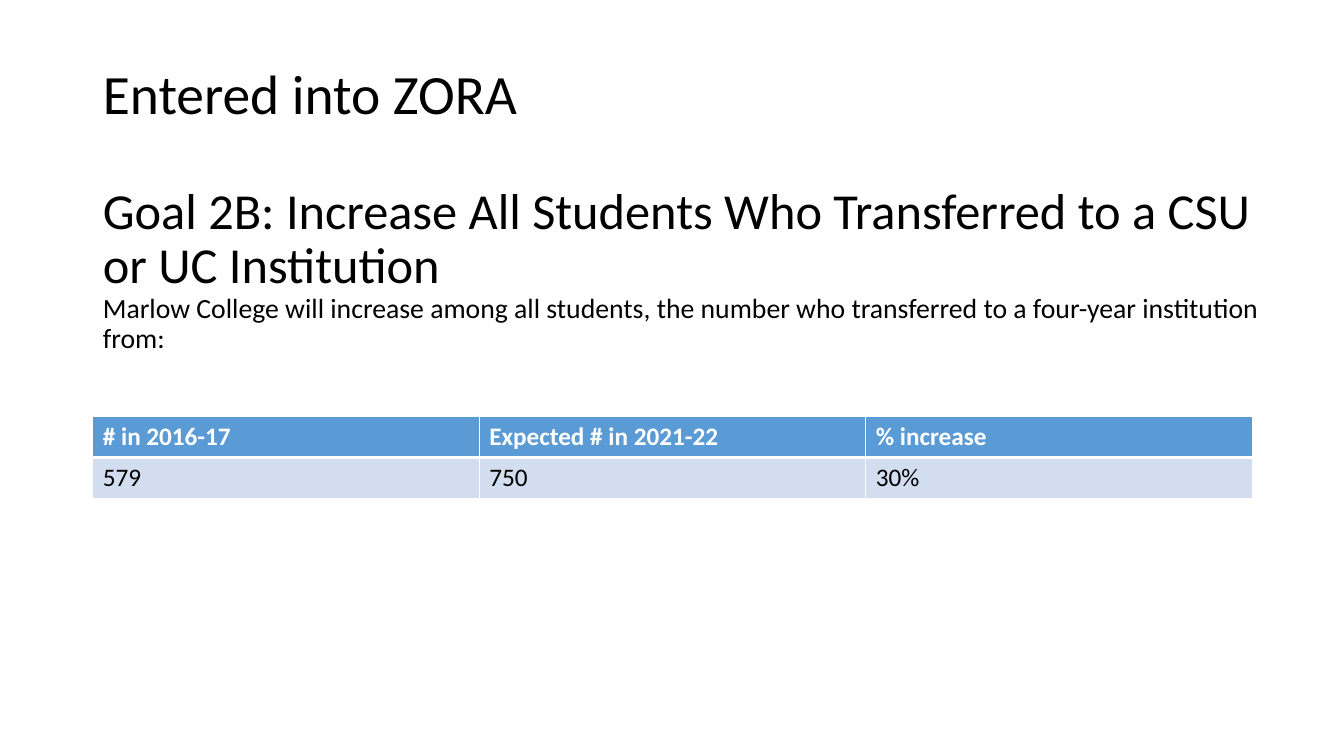
import pptx
import pptx.util
import pptx.dml.color
import pptx.enum.text
import pptx.oxml
import pptx.oxml.ns

Inches, Pt = pptx.util.Inches, pptx.util.Pt
RGBColor = pptx.dml.color.RGBColor

BLACK = RGBColor(0x00, 0x00, 0x00)
WHITE = RGBColor(0xFF, 0xFF, 0xFF)
HEADER_BLUE = RGBColor(0x5B, 0x9B, 0xD5)
PALE_BLUE = RGBColor(0xD2, 0xDE, 0xEF)
FONT = "Calibri"

# text, size in points, space after in points
HEADING = [
    ("Entered into ZORA", 39.6, 42),
    ("Goal 2B: Increase All Students Who Transferred to a CSU or UC Institution", 36, 0),
    ("Marlow College will increase among all students, the number who "
     "transferred to a four-year institution from:", 19.8, 0),
]
TRANSFERS = [
    ("# in 2016-17", "Expected # in 2021-22", "% increase"),
    ("579", "750", "30%"),
]
LEFT = Inches(0.92)
TABLE_TOP, TABLE_WIDTH, ROW_HEIGHT = Inches(4.13), Inches(11.5), Inches(0.41)


def style(target, values):
    for name, value in values.items():
        setattr(target, name, value)


def style_font(font, size, color, bold=False):
    style(font, {"name": FONT, "size": Pt(size), "bold": bold})
    font.color.rgb = color


def add_border(cell, side, width):
    cell._tc.get_or_add_tcPr().append(pptx.oxml.parse_xml(
        f'<a:ln{side} {pptx.oxml.ns.nsdecls("a")} w="{Pt(width)}">'
        f'<a:solidFill><a:srgbClr val="{WHITE}"/></a:solidFill></a:ln{side}>'))


def fill_heading(title):
    style(title, {"left": LEFT, "top": Inches(1.57),
                  "width": Inches(12.1), "height": Inches(1.45)})
    frame = title.text_frame
    style(frame, {"word_wrap": True,
                  "auto_size": pptx.enum.text.MSO_AUTO_SIZE.NONE,
                  "vertical_anchor": pptx.enum.text.MSO_ANCHOR.MIDDLE,
                  "margin_bottom": Inches(0.46)})
    for index, (text, size, gap) in enumerate(HEADING):
        para = frame.add_paragraph() if index else frame.paragraphs[0]
        style(para, {"alignment": pptx.enum.text.PP_ALIGN.LEFT, "line_spacing": 0.9,
                     "space_before": Pt(0), "space_after": Pt(gap)})
        span = para.add_run()
        span.text = text
        style_font(span.font, size, BLACK)


def add_transfer_table(page):
    rows, columns = len(TRANSFERS), len(TRANSFERS[0])
    table = page.shapes.add_table(rows, columns, LEFT, TABLE_TOP,
                                  TABLE_WIDTH, ROW_HEIGHT * rows).table
    for row, texts in enumerate(TRANSFERS):
        header = row == 0
        for column, text in enumerate(texts):
            cell = table.cell(row, column)
            for side in "LRTB":
                at_header_rule = side == ("B" if header else "T")
                add_border(cell, side, 3 if at_header_rule else 1)
            cell.fill.solid()
            cell.fill.fore_color.rgb = HEADER_BLUE if header else PALE_BLUE
            span = cell.text_frame.paragraphs[0].add_run()
            span.text = text
            style_font(span.font, 18, WHITE if header else BLACK, header)


def main():
    deck = pptx.Presentation()
    style(deck, {"slide_width": Inches(13.33), "slide_height": Inches(7.5)})
    page = deck.slides.add_slide(deck.slide_layouts.get_by_name("Title Only"))
    fill_heading(page.shapes.title)
    add_transfer_table(page)
    deck.save("out.pptx")


if __name__ == "__main__":
    main()
